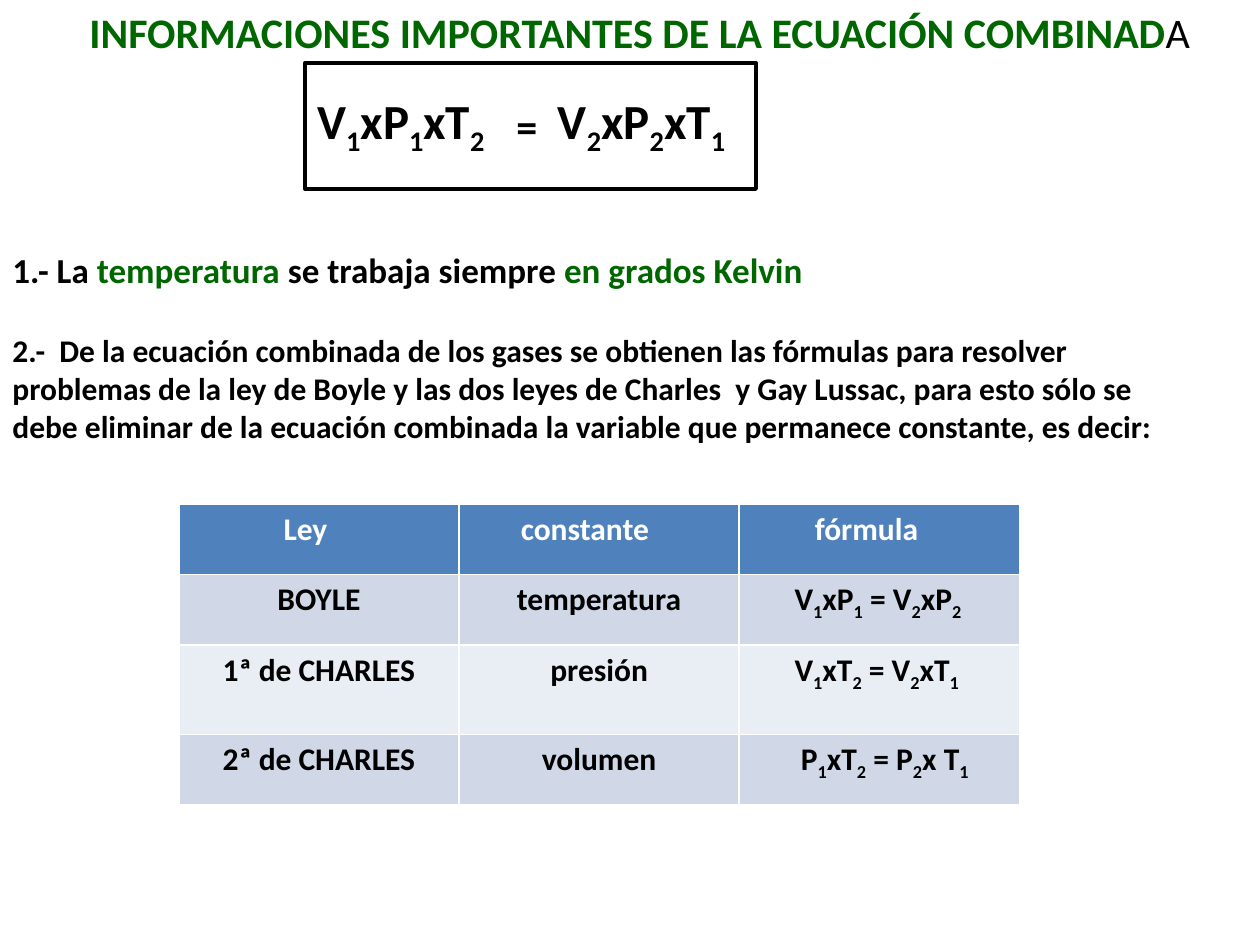
from itertools import groupby

from pptx import Presentation
from pptx.dml.color import RGBColor
from pptx.enum.shapes import MSO_SHAPE as SHAPE
from pptx.enum.text import MSO_ANCHOR as ANCHOR, MSO_AUTO_SIZE as FIT, PP_ALIGN as ALIGN
from pptx.util import Inches, Pt

BLACK = RGBColor(0x00, 0x00, 0x00)
WHITE = RGBColor(0xFF, 0xFF, 0xFF)
GREEN = RGBColor(0x00, 0x66, 0x00)
BLUE = RGBColor(0x4F, 0x81, 0xBD)
BAND_DARK = RGBColor(0xD0, 0xD8, 0xE8)
BAND_LIGHT = RGBColor(0xE9, 0xED, 0xF4)

HEADERS = [("Ley", 0.83), ("constante", 0.49), ("fórmula", 0.6)]
LAWS = [
    ("BOYLE", "temperatura", "V1xP1 = V2xP2", 0.44),
    ("1ª de CHARLES", "presión", "V1xT2 = V2xT1", 0.44),
    ("2ª de CHARLES", "volumen", "P1xT2 = P2x T1", 0.49),
]
ROW_HEIGHTS = [0.56, 0.56, 0.71, 0.56]


def write(p, text, size=18, color=BLACK, bold=True, formula=False):
    parts = groupby(text, str.isdigit) if formula else [(False, text)]
    for is_index, chars in parts:
        r = p.add_run()
        r.text = "".join(chars)
        r.font.name = "Calibri"
        r.font.size = Pt(size)
        r.font.bold = bold
        r.font.color.rgb = color
        if is_index:
            r.font._element.set("baseline", "-25000")


def add_title(s):
    sp = s.shapes.title
    sp.left, sp.top = Inches(0.61), Inches(0)
    sp.width, sp.height = Inches(9.14), Inches(0.5)
    tf = sp.text_frame
    tf.auto_size = FIT.NONE
    tf.vertical_anchor = ANCHOR.TOP
    p = tf.paragraphs[0]
    p.alignment = ALIGN.LEFT
    write(p, "INFORMACIONES IMPORTANTES DE LA ECUACIÓN COMBINAD", size=24, color=GREEN)
    write(p, "A", size=24, bold=False)


def add_text(s, x, y, w, h, wrap=True):
    tf = s.shapes.add_textbox(Inches(x), Inches(y), Inches(w), Inches(h)).text_frame
    tf.word_wrap = wrap
    return tf.paragraphs[0]


def add_equation(s):
    for text, x in [("V1xP1xT2", 2.42), ("V2xP2xT1", 4.33)]:
        write(add_text(s, x, 0.67, 1.6, 0.57, wrap=False), text, size=28, formula=True)
    write(add_text(s, 4, 0.75, 0.37, 0.5, wrap=False), "=", size=24)
    frame = s.shapes.add_shape(
        SHAPE.RECTANGLE, Inches(2.42), Inches(0.5), Inches(3.58), Inches(1))
    frame.shadow.inherit = False
    frame.fill.background()
    frame.line.color.rgb = BLACK
    frame.line.width = Pt(2.25)


def add_notes_on_use(s):
    p = add_text(s, 0, 1.92, 10, 0.44)
    for text, color in [("1.- La ", BLACK), ("temperatura ", GREEN),
                        ("se trabaja siempre ", BLACK), ("en grados Kelvin", GREEN)]:
        write(p, text, size=20, color=color)
    write(add_text(s, 0, 2.58, 9.58, 1.01),
          "2.-  De la ecuación combinada de los gases se obtienen las fórmulas para "
          "resolver problemas de la ley de Boyle y las dos leyes de Charles  y Gay "
          "Lussac, para esto sólo se debe eliminar de la ecuación combinada la "
          "variable que permanece constante, es decir:")


def fill_cell(cell, text, fill, indent=None, **fmt):
    cell.fill.solid()
    cell.fill.fore_color.rgb = fill
    p = cell.text_frame.paragraphs[0]
    if indent is None:
        p.alignment = ALIGN.CENTER
    else:
        cell.margin_left = Inches(indent)
    write(p, text, **fmt)


def add_law_table(s):
    table = s.shapes.add_table(
        len(ROW_HEIGHTS), len(HEADERS), Inches(1.42), Inches(4),
        Inches(6.67), Inches(sum(ROW_HEIGHTS))).table
    for row, height in zip(table.rows, ROW_HEIGHTS):
        row.height = Inches(height)
    for col, (text, indent) in enumerate(HEADERS):
        fill_cell(table.cell(0, col), text, BLUE, indent, color=WHITE)
    for row, (law, constant, formula, indent) in enumerate(LAWS, 1):
        fill = BAND_DARK if row % 2 else BAND_LIGHT
        fill_cell(table.cell(row, 0), law, fill)
        fill_cell(table.cell(row, 1), constant, fill)
        fill_cell(table.cell(row, 2), formula, fill, indent, formula=True)


def main():
    prs = Presentation()
    prs.slide_width, prs.slide_height = Inches(10), Inches(7.5)
    s = prs.slides.add_slide(prs.slide_layouts[5])
    add_title(s)
    add_equation(s)
    add_notes_on_use(s)
    add_law_table(s)
    prs.save("out.pptx")


if __name__ == "__main__":
    main()
